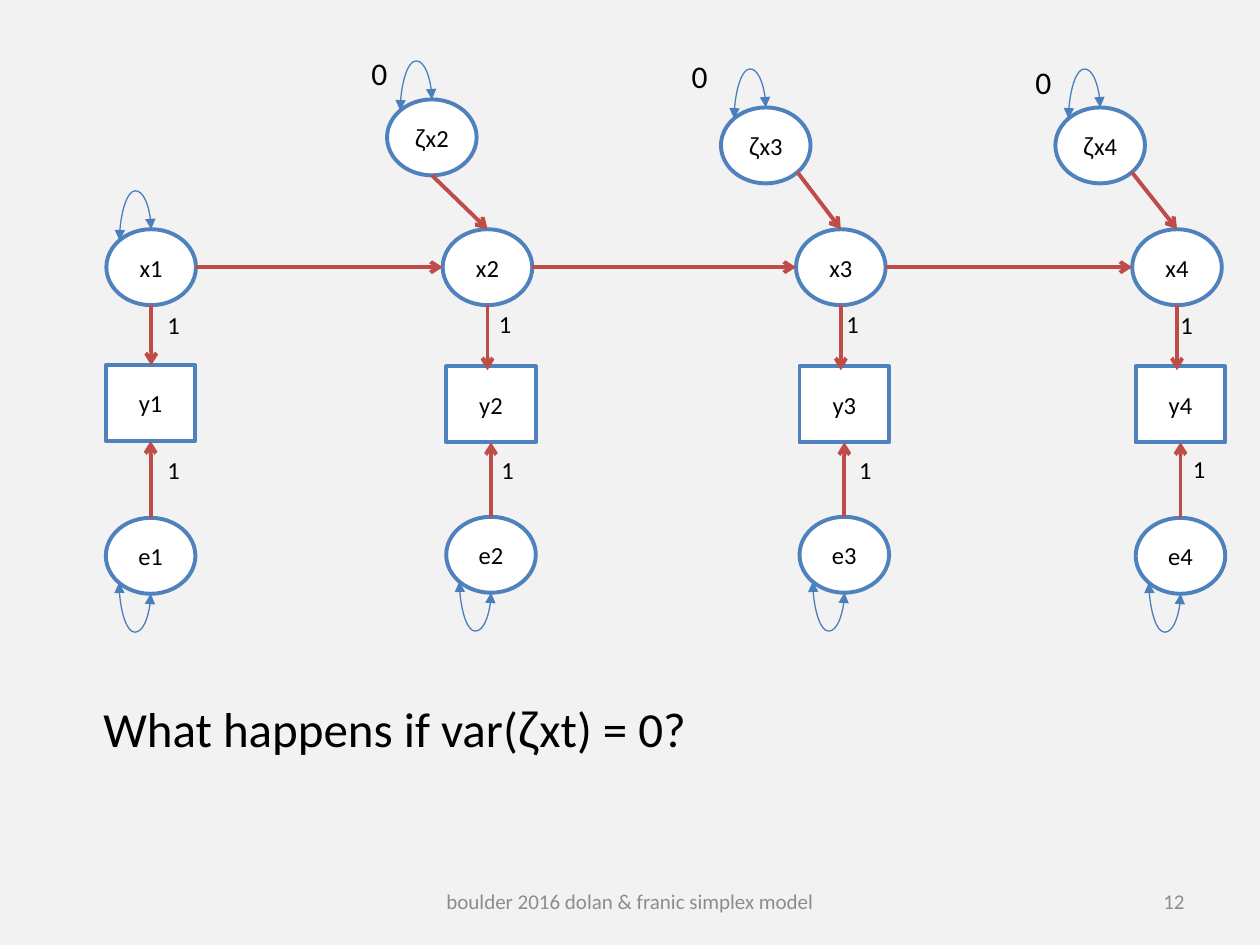
from itertools import groupby

from pptx import Presentation
from pptx.dml.color import RGBColor
from pptx.enum import shapes as s, text as t
from pptx.oxml import ns
from pptx.util import Pt
from lxml import etree

HUE = {"back": "F2F2F2", "node": "FFFFFF", "edge": "4F81BD", "path": "BF4C48",
       "loop": "4B7EBC", "ink": "000000", "foot": "8C8C8C"}
W, H = 51.2, 43.4                       # size of every node
DX, DY = W * 0.3536, H * 0.1464         # ellipse corner: from centre, from rim
RISE = 22                               # height of a variance loop
OVAL, RECT = s.MSO_SHAPE.OVAL, s.MSO_SHAPE.RECTANGLE
LEFT, MID, RIGHT = t.PP_ALIGN.LEFT, t.PP_ALIGN.CENTER, t.PP_ALIGN.RIGHT


def tint(name):
    return RGBColor.from_string(HUE[name])


def write(shape, words, size, align=LEFT, hue="ink", wrap=False):
    """Fill a shape with one paragraph; the Greek letter is set in Arial."""
    frame = shape.text_frame
    frame.word_wrap = wrap
    para = frame.paragraphs[0]
    para.alignment = align
    for greek, part in groupby(words, lambda c: c == "ζ"):
        run = para.add_run()
        run.text = "".join(part)
        run.font.size = Pt(size)
        run.font.name = "Arial" if greek else "Calibri"
        run.font.color.rgb = tint(hue)
    return frame


def label(slide, box, words, size, **style):
    shape = slide.shapes.add_textbox(*map(Pt, box))
    return write(shape, words, size, **style)


def node(slide, kind, left, top, words):
    shape = slide.shapes.add_shape(kind, Pt(left), Pt(top), Pt(W), Pt(H))
    shape.shadow.inherit = False
    shape.fill.solid()
    shape.fill.fore_color.rgb = tint("node")
    shape.line.color.rgb = tint("edge")
    shape.line.width = Pt(2.25)
    frame = write(shape, words, 14, MID)
    frame.vertical_anchor = t.MSO_ANCHOR.MIDDLE
    frame.margin_left = frame.margin_right = 0


def link(slide, kind, ends, hue, width, heads):
    line = slide.shapes.add_connector(kind, *map(Pt, ends))
    line.line.color.rgb = tint(hue)
    line.line.width = Pt(width)
    pen = line.line._ln
    for tag, head in heads.items():
        etree.SubElement(pen, ns.qn("a:" + tag), type=head)
    etree.SubElement(line._element.spPr, ns.qn("a:effectLst"))
    return line


def arrow(slide, *ends):
    link(slide, s.MSO_CONNECTOR.STRAIGHT, ends, "path", 2.25,
         {"tailEnd": "arrow"})


def loop(slide, left, top, below=False):
    """Double-headed arc from the rim to the left corner of an ellipse."""
    midx = left + W / 2 - DX / 2
    midy = top + H - DY / 2 if below else top + DY / 2
    ends = (midx - DY / 2, midy - DX / 2, midx + DY / 2, midy + DX / 2)
    arc = link(slide, s.MSO_CONNECTOR.CURVE, ends, "loop", 0.75,
               {"headEnd": "triangle", "tailEnd": "triangle"})
    # A quarter turn and flips stand the arc on its two ends
    props = arc._element.spPr
    turn = props.find(ns.qn("a:xfrm"))
    turn.set("rot", "16200000")
    turn.set("flipH", "1")
    if not below:
        turn.set("flipV", "1")
    bend = 1 + RISE / DY if below else -RISE / DY
    guides = props.find(ns.qn("a:prstGeom")).find(ns.qn("a:avLst"))
    etree.SubElement(guides, ns.qn("a:gd"), name="adj1",
                     fmla=f"val {round(bend * 100000)}")


def stage(slide, left, top, num, shift, down, rise, dip, ones):
    """Latent x over observed y over error e; left, top is the x node."""
    mid, low = left + W / 2, left + shift
    ytop, etop = top + down, top + rise
    node(slide, RECT, low, ytop, f"y{num}")
    node(slide, OVAL, left, top, f"x{num}")
    node(slide, OVAL, low, etop, f"e{num}")
    arrow(slide, mid, top + H, mid, ytop + dip)
    arrow(slide, low + W / 2, etop, low + W / 2, ytop + H)
    loop(slide, low, etop, below=True)
    for over, drop in ones:
        label(slide, (left + over, top + drop, 28, 29.5), "1", 14)


def noise(slide, left, top, num, goal, corner, zero):
    """Disturbance with its variance label and an arrow to the x node."""
    node(slide, OVAL, left, top, f"ζx{num}")
    if corner:
        start = left + W / 2 + DX, top + H - DY
    else:
        start = left + W / 2, top + H
    arrow(slide, *start, *goal)
    loop(slide, left, top)
    label(slide, (left + zero[0], top + zero[1], 23.8, 28.8), "0", 18)


def footer(slide, left, top, width, height):
    for over, wide, words, align in (
            (0, 228, "boulder 2016 dolan & franic simplex model", MID),
            (width - 168, 168, "12", RIGHT)):
        frame = label(slide, (left + over, top, wide, height), words, 12,
                      align=align, hue="foot", wrap=True)
        frame.vertical_anchor = t.MSO_ANCHOR.MIDDLE


def main():
    deck = Presentation()
    deck.slide_width, deck.slide_height = Pt(720), Pt(540)
    slide = deck.slides.add_slide(deck.slide_layouts[6])
    slide.background.fill.solid()
    slide.background.fill.fore_color.rgb = tint("back")

    # Measurement part: x left, shift of y and e, y drop, e drop, dip, ones
    row = 131
    stages = ((60.8, -0.3, 77.7, 164.9, 0, ((27.8, 42.5), (27.8, 125.3))),
              (253, 2, 78.4, 164.3, 2.2, ((25, 41.8), (26.4, 125.3))),
              (454.9, 2, 78.4, 164.3, 2.2, ((21.7, 41.8), (29, 125.3))),
              (647, 2, 78.4, 164.9, 2.2, ((20.4, 42.5), (27.6, 124.6))))
    for num, (left, *rest) in enumerate(stages, 1):
        stage(slide, left, row, num, *rest)
    loop(slide, stages[0][0], row)

    # Chain from each x to the next
    for here, there in zip(stages, stages[1:]):
        arrow(slide, here[0] + W, row + H / 2, there[0], row + H / 2)

    # Disturbances of x2 to x4
    parts = ((221.2, 56.8, False, (-16, -29.4)),
             (412, 61.4, True, (-23.9, -32.6)),
             (603.1, 61.4, True, (-18.5, -29)))
    for num, (left, top, corner, zero) in enumerate(parts, 2):
        goal = stages[num - 1][0] + W / 2, row
        noise(slide, left, top, num, goal, corner, zero)

    # Question and footer
    label(slide, (52, 395.5, 353, 41), "What happens if var(ζxt) = 0?", 28)
    footer(slide, 246, 500.4, 438, 28.8)
    deck.save("out.pptx")


if __name__ == "__main__":
    main()
